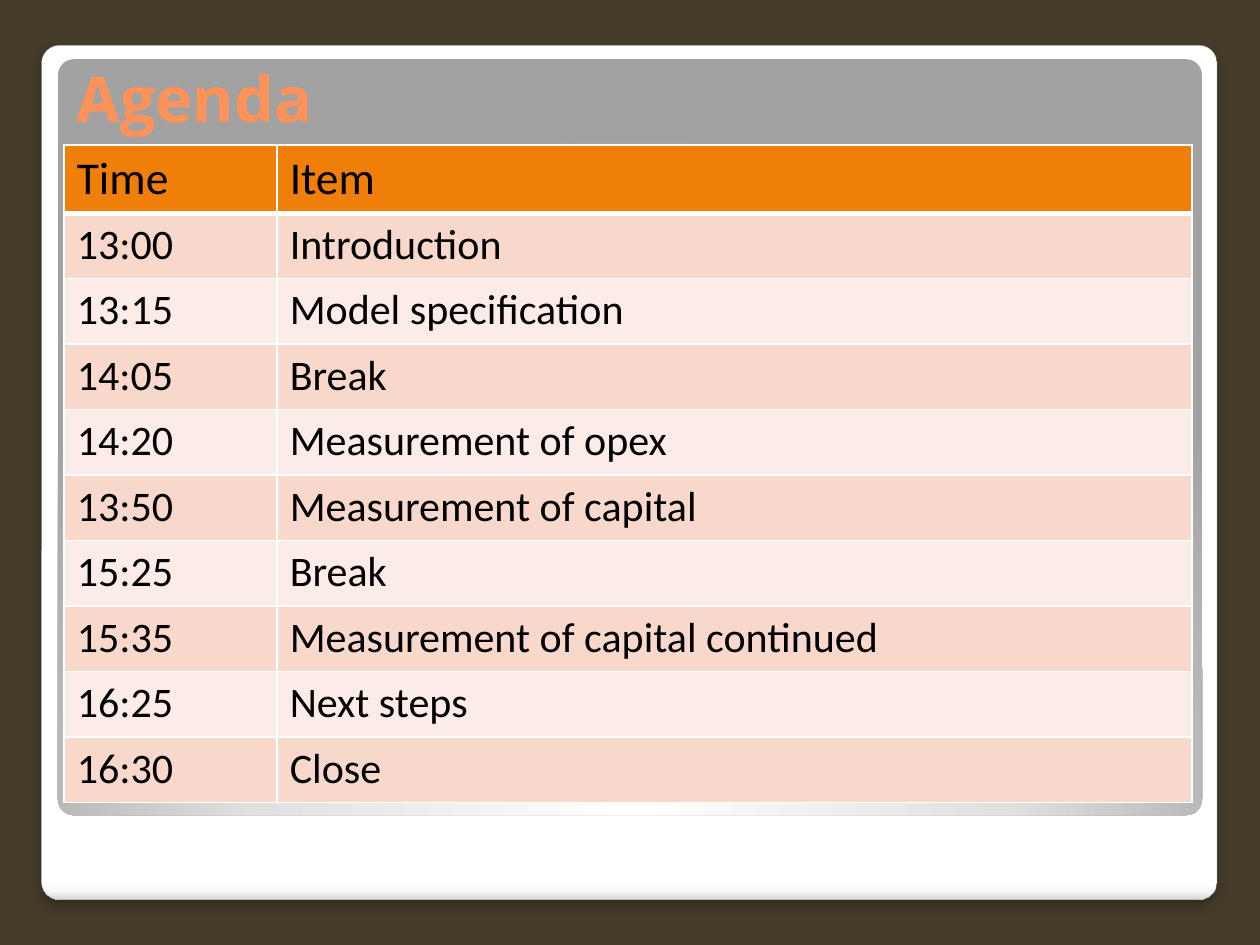
from pptx import Presentation
from pptx.dml.color import RGBColor
from pptx.enum.shapes import MSO_SHAPE
from pptx.enum.text import MSO_ANCHOR, PP_ALIGN
from pptx.oxml import parse_xml
from pptx.oxml.ns import nsdecls
from pptx.util import Inches, Pt

# Content
TITLE = "Agenda"
AGENDA = [
    ("Time", "Item"),
    ("13:00", "Introduction"),
    ("13:15", "Model specification"),
    ("14:05", "Break"),
    ("14:20", "Measurement of opex"),
    ("13:50", "Measurement of capital"),
    ("15:25", "Break"),
    ("15:35", "Measurement of capital continued"),
    ("16:25", "Next steps"),
    ("16:30", "Close"),
]

COLORS = {
    "background": "443C29", "title": "FF9258", "text": "000000",
    "header": "F07F09", "odd": "F9D8CC", "even": "FCECE7",
    "border": "FFFFFF", "outline": "A4A4A4",
}
CARD_STOPS = [(0, "FFFFFF"), (98, "FFFFFF"), (99, "F7F7F7"), (100, "DADADA")]
PANEL_STOPS = [(0, "FFFFFF"), (55, "E1E1E1"), (100, "A2A2A2")]
LINEAR_DOWN = '<a:lin ang="5400000" scaled="0"/>'
GLOW_FROM_BELOW = ('<a:path path="circle"><a:fillToRect l="50000" t="175000" '
                   'r="50000" b="-75000"/></a:path>')
COLUMN_WIDTHS = (1.69, 7.26)
HEADER_HEIGHT, ROW_HEIGHT = 0.48, 0.52


def rgb(name):
    return RGBColor.from_string(COLORS[name])


def add_panel(slide, box, stops, direction):
    """Add a rounded panel with a gradient fill and no shadow or line."""
    shape = slide.shapes.add_shape(MSO_SHAPE.ROUNDED_RECTANGLE, *map(Inches, box))
    shape.adjustments[0] = 0.021
    shape.line.fill.background()
    shape.shadow.inherit = False
    stop_xml = "".join(
        f'<a:gs pos="{position * 1000}"><a:srgbClr val="{color}"/></a:gs>'
        for position, color in stops)
    gradient = parse_xml(f'<a:gradFill {nsdecls("a")} rotWithShape="1">'
                         f'<a:gsLst>{stop_xml}</a:gsLst>{direction}</a:gradFill>')
    shape._element.spPr.prstGeom.addnext(gradient)
    return shape


def add_run(paragraph, text, font_name, size, color, bold=False):
    run = paragraph.add_run()
    run.text = text
    run.font.name, run.font.size, run.font.bold = font_name, Pt(size), bold
    run.font.color.rgb = rgb(color)


def set_borders(cell, widths):
    """Draw left, right, top and bottom borders, widths in points."""
    properties = cell._tc.get_or_add_tcPr()
    for side, width in zip("LRTB", widths):
        properties.append(parse_xml(
            f'<a:ln{side} {nsdecls("a")} w="{Pt(width)}"><a:solidFill>'
            f'<a:srgbClr val="{COLORS["border"]}"/></a:solidFill></a:ln{side}>'))


presentation = Presentation()
presentation.slide_width, presentation.slide_height = Inches(10), Inches(7.5)
slide = presentation.slides.add_slide(presentation.slide_layouts[5])
slide.background.fill.solid()
slide.background.fill.fore_color.rgb = rgb("background")

# Backdrop: white card with a soft shadow, grey panel on top
card = add_panel(slide, (0.33, 0.36, 9.33, 6.78), CARD_STOPS, LINEAR_DOWN)
card.line.color.rgb = rgb("outline")
card.line.width = Pt(0.16)
card._element.spPr.find("{*}effectLst").append(parse_xml(
    f'<a:outerShdw {nsdecls("a")} blurRad="{Pt(6)}" dist="{Pt(4)}" dir="5400000" '
    'algn="t" rotWithShape="0"><a:srgbClr val="000000"><a:alpha val="25000"/>'
    '</a:srgbClr></a:outerShdw>'))
add_panel(slide, (0.46, 0.47, 9.08, 6), PANEL_STOPS, GLOW_FROM_BELOW)

# Title, brought in front of the backdrop
title = slide.shapes.title
slide.shapes._spTree.append(title._element)
title.left, title.top, title.width, title.height = map(Inches, (0.51, 0.36, 8.95, 0.76))
title.text_frame.vertical_anchor = MSO_ANCHOR.BOTTOM
title_paragraph = title.text_frame.paragraphs[0]
title_paragraph.alignment = PP_ALIGN.LEFT
add_run(title_paragraph, TITLE, "Open Sans", 36, "title", bold=True)

# Agenda table
table_height = HEADER_HEIGHT + ROW_HEIGHT * (len(AGENDA) - 1)
table = slide.shapes.add_table(
    len(AGENDA), len(COLUMN_WIDTHS), Inches(0.51), Inches(1.15),
    Inches(sum(COLUMN_WIDTHS)), Inches(table_height)).table
for column, width in zip(table.columns, COLUMN_WIDTHS):
    column.width = Inches(width)
for row_index, entries in enumerate(AGENDA):
    is_header = row_index == 0
    table.rows[row_index].height = Inches(HEADER_HEIGHT if is_header else ROW_HEIGHT)
    fill = "header" if is_header else "odd" if row_index % 2 else "even"
    top, bottom = (3 if row_index == 1 else 1), (3 if is_header else 1)
    for column_index, text in enumerate(entries):
        cell = table.cell(row_index, column_index)
        set_borders(cell, (1, 1, top, bottom))
        cell.fill.solid()
        cell.fill.fore_color.rgb = rgb(fill)
        add_run(cell.text_frame.paragraphs[0], text, "Calibri",
                26 if is_header else 24, "text")

presentation.save("out.pptx")
